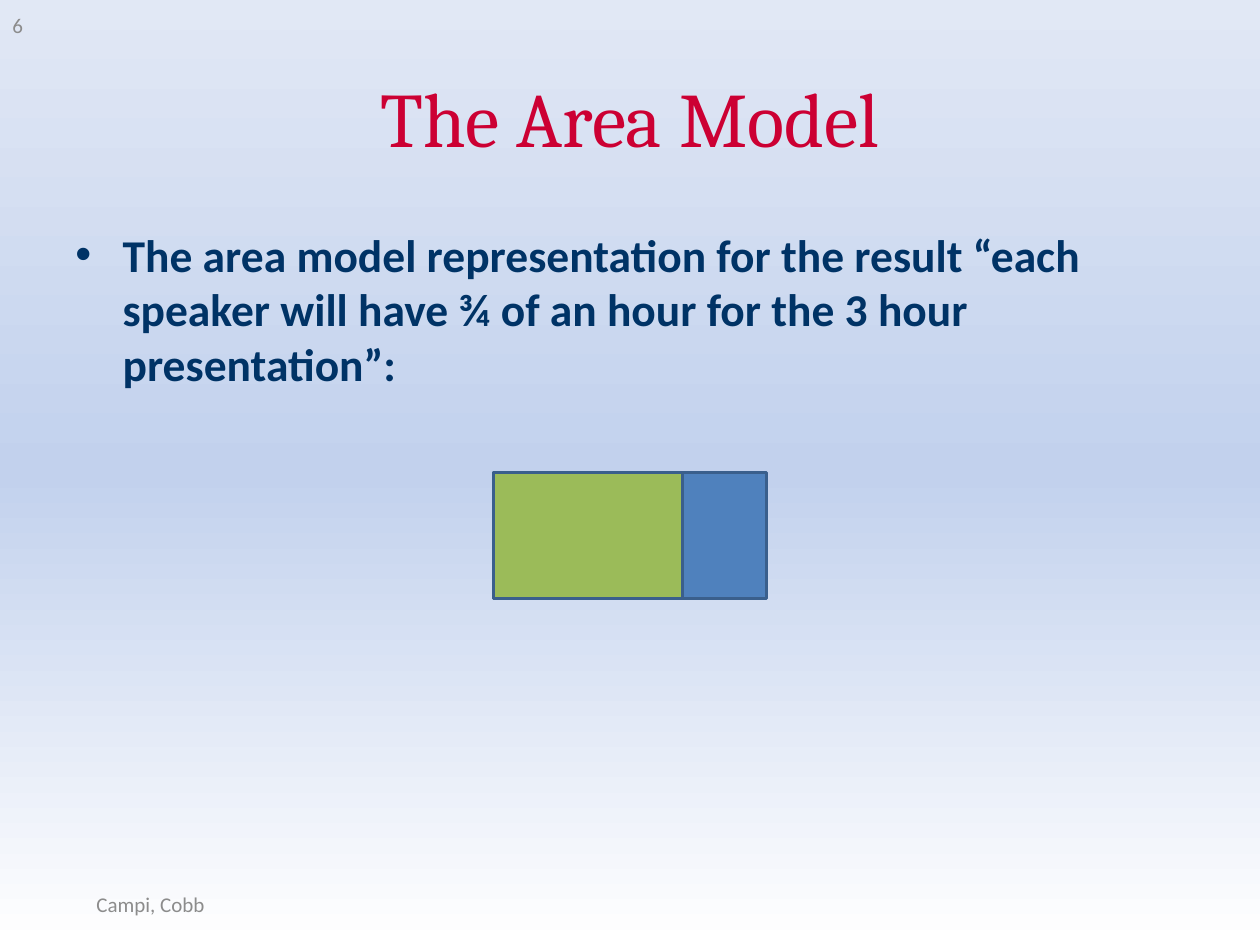
from copy import deepcopy
from dataclasses import dataclass

from lxml import etree
from pptx import Presentation
from pptx import util as u
from pptx.dml.color import RGBColor
from pptx.enum import shapes, text
from pptx.oxml import ns


@dataclass(frozen=True)
class Theme:
    heading_font: str = "Cambria"
    body_font: str = "Calibri"
    heading: str = "CC0033"
    body: str = "003366"
    muted: str = "8C8C8C"
    whole_hours: str = "4F81BD"
    speaker_share: str = "9BBB59"
    outline: str = "3A5F8C"
    backdrop: tuple = ("FFFFFF", "C2D1ED", "E1E8F5")
    heading_size: int = 44
    body_size: int = 26
    small_size: int = 12
    outline_width: int = 2


class SlideBuilder:
    def __init__(self, slide, theme):
        self.slide = slide
        self.theme = theme

    def background(self):
        fill = self.slide.background.fill
        fill.gradient()
        fill.gradient_angle = 90
        stops = next(self.slide.element.iter(ns.qn("a:gsLst")))
        stops.insert(1, deepcopy(stops[0]))
        last = len(self.theme.backdrop) - 1
        for index, (stop, color) in enumerate(zip(fill.gradient_stops, self.theme.backdrop)):
            stop.position = index / last
            stop.color.rgb = RGBColor.from_string(color)

    def text(self, wording, box, size, color, font=None, bold=False,
             align=text.PP_ALIGN.LEFT, anchor=text.MSO_ANCHOR.MIDDLE, bullet_indent=0):
        frame = self.slide.shapes.add_textbox(*map(u.Pt, box)).text_frame
        frame.word_wrap = True
        frame.vertical_anchor = anchor
        paragraph = frame.paragraphs[0]
        paragraph.alignment = align
        if bullet_indent:
            properties = paragraph._p.get_or_add_pPr()
            properties.set("marL", str(u.Pt(bullet_indent)))
            properties.set("indent", str(-u.Pt(bullet_indent)))
            etree.SubElement(properties, ns.qn("a:buFont"), typeface="Arial")
            etree.SubElement(properties, ns.qn("a:buChar"), char="•")
        run = paragraph.add_run()
        run.text = wording
        run.font.name = font or self.theme.body_font
        run.font.size = u.Pt(size)
        run.font.bold = bold
        run.font.color.rgb = RGBColor.from_string(color)

    def rectangle(self, box, color):
        area = self.slide.shapes.add_shape(shapes.MSO_SHAPE.RECTANGLE, *map(u.Pt, box))
        area.shadow.inherit = False
        area.fill.solid()
        area.fill.fore_color.rgb = RGBColor.from_string(color)
        area.line.color.rgb = RGBColor.from_string(self.theme.outline)
        area.line.width = u.Pt(self.theme.outline_width)


def main():
    deck = Presentation()
    deck.slide_width, deck.slide_height = u.Pt(720), u.Pt(540)
    theme = Theme()
    builder = SlideBuilder(deck.slides.add_slide(deck.slide_layouts[6]), theme)

    builder.background()
    builder.text("The Area Model", (36, 21.6, 648, 90), theme.heading_size, theme.heading,
                 font=theme.heading_font, align=text.PP_ALIGN.CENTER)
    builder.text("The area model representation for the result “each speaker will have ¾ "
                 "of an hour for the 3 hour presentation”:",
                 (36, 126, 648, 356.4), theme.body_size, theme.body, bold=True,
                 anchor=text.MSO_ANCHOR.TOP, bullet_indent=27)

    for width, color in ((156, theme.whole_hours), (108, theme.speaker_share)):
        builder.rectangle((282, 270, width, 72), color)

    for wording, box in (("6", (0, 0, 168, 28.8)), ("Campi, Cobb", (48, 502, 228, 28.8))):
        builder.text(wording, box, theme.small_size, theme.muted)

    deck.save("out.pptx")


if __name__ == "__main__":
    main()
